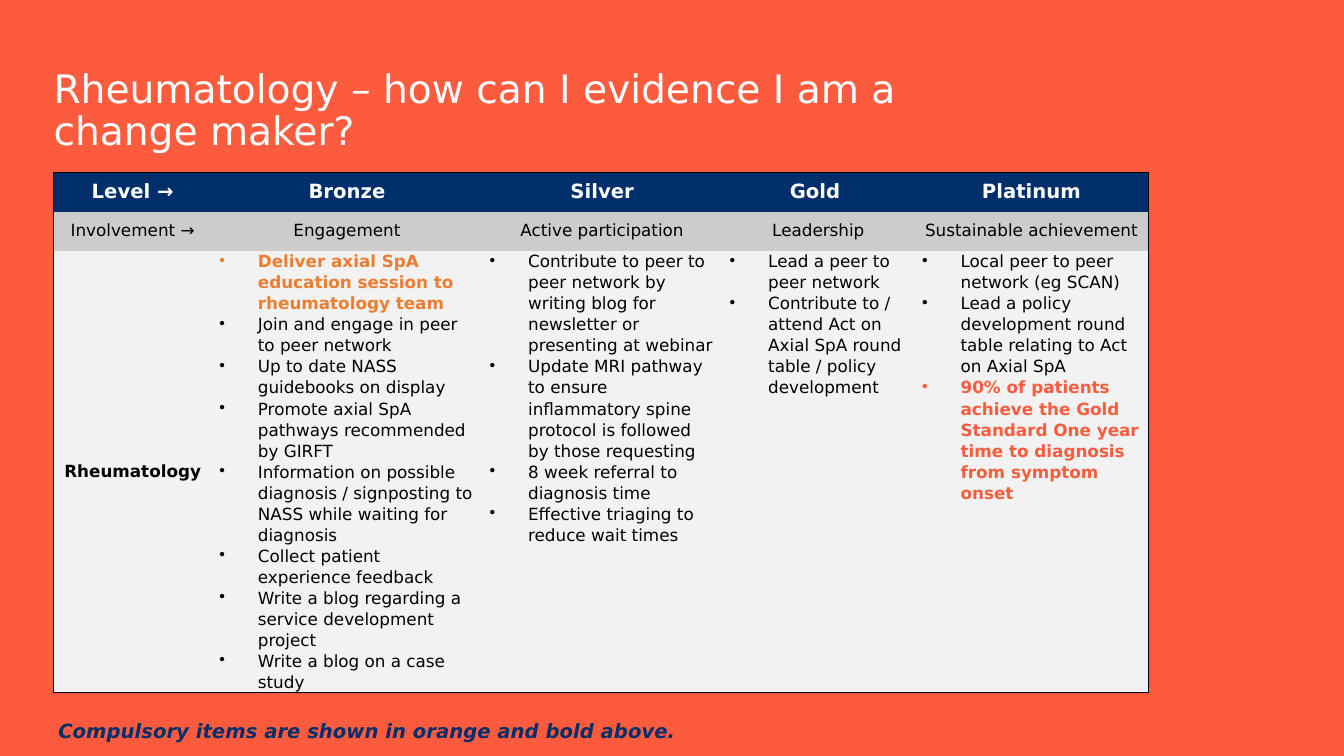
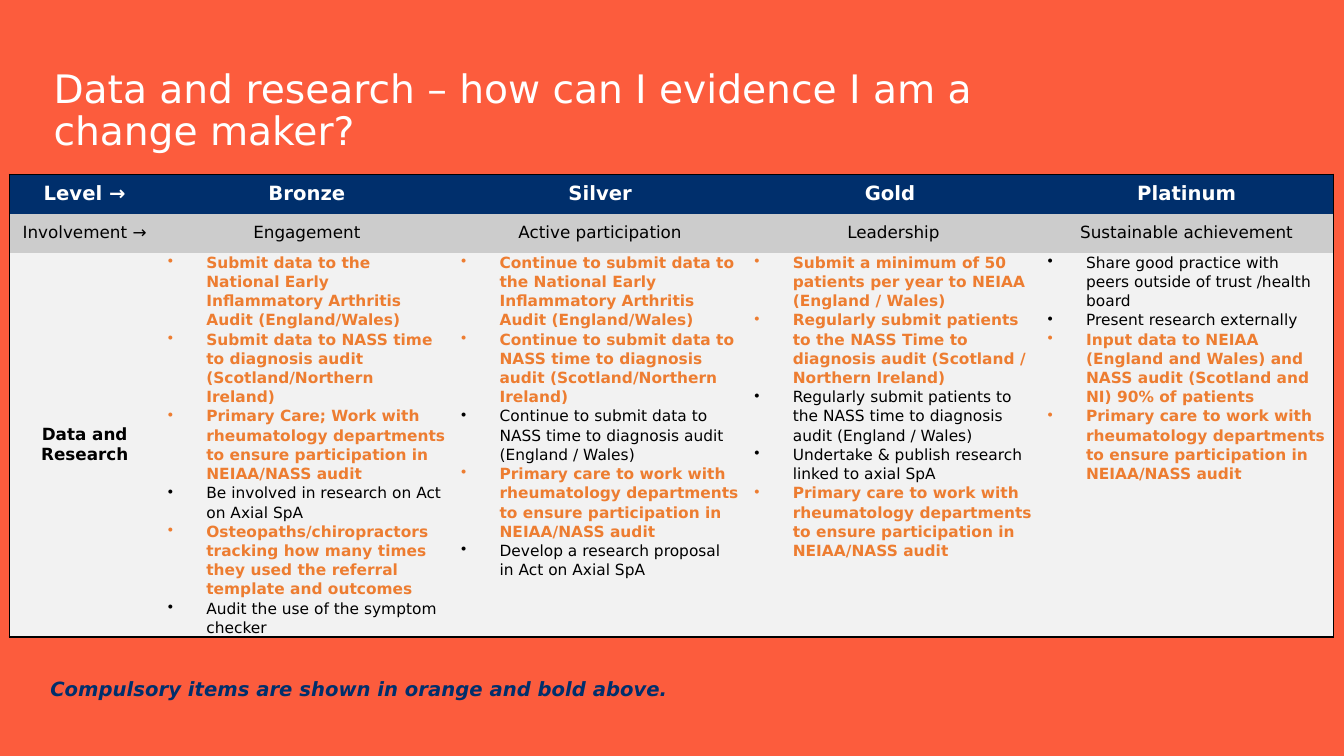
from dataclasses import dataclass

import pptx
import pptx.dml.color
import pptx.enum.text
import pptx.oxml.ns
import pptx.presentation
import pptx.slide
import pptx.table
import pptx.text.text
import pptx.util
from lxml import etree
from pptx.util import Cm, Pt

ALIGN = pptx.enum.text.PP_ALIGN
ANCHOR = pptx.enum.text.MSO_ANCHOR


@dataclass(frozen=True)
class Theme:
    font: str = "DejaVu Sans"
    coral: str = "FC5C3D"
    orange: str = "ED7D31"
    navy: str = "002F6C"
    grey: str = "CCCCCC"
    pale: str = "F2F2F2"
    white: str = "FFFFFF"
    black: str = "000000"
    title_size: float = 28
    heading_size: float = 14
    label_size: float = 12
    border: float = 1


THEME = Theme()


@dataclass(frozen=True)
class Item:
    """One activity; a compulsory one carries a highlight colour."""
    text: str
    highlight: str = ""


@dataclass(frozen=True)
class Page:
    title: str
    team: str
    left: float
    top: float
    columns: tuple[float, ...]
    body_height: float
    item_size: float
    note_left: float
    note_top: float
    activities: tuple[tuple[Item, ...], ...]


def must(text: str, colour: str = THEME.orange) -> Item:
    return Item(text, colour)


# Content
LEVELS = ("Level →", "Bronze", "Silver", "Gold ", "Platinum")
INVOLVEMENT = ("Involvement →", "Engagement", "Active participation", "Leadership",
               "Sustainable achievement")
NOTE = "Compulsory items are shown in orange and bold above."
HEADER_HEIGHT = 0.99
PRIMARY_CARE = must("Primary care to work with rheumatology departments to ensure "
                    "participation in NEIAA/NASS audit")

PAGES = (
    Page(
        title="Rheumatology – how can I evidence I am a change maker?",
        team="Rheumatology",
        left=1.35, top=4.34, columns=(3.99, 6.81, 6.05, 4.85, 5.89),
        body_height=11.1, item_size=12, note_left=0.71, note_top=17.98,
        activities=(
            (must("Deliver axial SpA education session to rheumatology team"),
             Item("Join and engage in peer to peer network"),
             Item("Up to date NASS guidebooks on display"),
             Item("Promote axial SpA pathways recommended by GIRFT"),
             Item("Information on possible diagnosis / signposting to NASS while waiting "
                  "for diagnosis"),
             Item("Collect patient experience feedback"),
             Item("Write a blog regarding a service development project"),
             Item("Write a blog on a case study")),
            (Item("Contribute to peer to peer network by writing blog for newsletter or "
                  "presenting at webinar"),
             Item("Update MRI pathway to ensure inflammatory spine protocol is followed "
                  "by those requesting"),
             Item("8 week referral to diagnosis time"),
             Item("Effective triaging to reduce wait times")),
            (Item("Lead a peer to peer network"),
             Item("Contribute to / attend Act on Axial SpA round table / policy "
                  "development")),
            (Item("Local peer to peer network (eg SCAN)"),
             Item("Lead a policy development round table relating to Act on Axial SpA"),
             must("90% of patients achieve the Gold Standard One year time to diagnosis "
                  "from symptom onset", THEME.coral)),
        ),
    ),
    Page(
        title="Data and research – how can I evidence I am a change maker?",
        team="Data and Research",
        left=0.23, top=4.39, columns=(3.81,) + (7.39,) * 4,
        body_height=9.67, item_size=11, note_left=0.51, note_top=16.94,
        activities=(
            (must("Submit data to the National Early Inflammatory Arthritis Audit "
                  "(England/Wales)"),
             must("Submit data to NASS time to diagnosis audit (Scotland/Northern Ireland)"),
             must("Primary Care; Work with rheumatology departments to ensure "
                  "participation in NEIAA/NASS audit"),
             Item("Be involved in research on Act on Axial SpA"),
             must("Osteopaths/chiropractors tracking how many times they used the "
                  "referral template and outcomes"),
             Item("Audit the use of the symptom checker")),
            (must("Continue to submit data to the National Early Inflammatory Arthritis "
                  "Audit (England/Wales)"),
             must("Continue to submit data to NASS time to diagnosis audit "
                  "(Scotland/Northern Ireland)"),
             Item("Continue to submit data to NASS time to diagnosis audit "
                  "(England / Wales)"),
             PRIMARY_CARE,
             Item("Develop a research proposal in Act on Axial SpA")),
            (must("Submit a minimum of 50 patients per year to NEIAA (England / Wales)"),
             must("Regularly submit patients to the NASS Time to diagnosis audit "
                  "(Scotland / Northern Ireland)"),
             Item("Regularly submit patients to the NASS time to diagnosis audit "
                  "(England / Wales)"),
             Item("Undertake & publish research linked to axial SpA"),
             PRIMARY_CARE),
            (Item("Share good practice with peers outside of trust /health board"),
             Item("Present research externally"),
             must("Input data to NEIAA (England and Wales) and NASS audit (Scotland and "
                  "NI) 90% of patients"),
             PRIMARY_CARE),
        ),
    ),
)


# Text helpers
def rgb(colour: str) -> pptx.dml.color.RGBColor:
    return pptx.dml.color.RGBColor.from_string(colour)


def style(paragraph: pptx.text.text._Paragraph, size: float, colour: str,
          bold: bool = False, italic: bool = False) -> None:
    for run in paragraph.runs:
        run.font.name = THEME.font
        run.font.size = Pt(size)
        run.font.color.rgb = rgb(colour)
        run.font.bold = bold
        run.font.italic = italic


def indent(paragraph: pptx.text.text._Paragraph, left: float, first: float = 0,
           bullet: str = "") -> None:
    properties = paragraph._p.get_or_add_pPr()
    properties.set("marL", str(Cm(left)))
    properties.set("indent", str(Cm(first)))
    if bullet:
        etree.SubElement(properties, pptx.oxml.ns.qn("a:buChar")).set("char", bullet)


# Table cells
def set_borders(cell: pptx.table._Cell, outer_sides: str) -> None:
    """Draw the named sides (of L, R, T, B) and hide the others."""
    qn = pptx.oxml.ns.qn
    properties = cell._tc.get_or_add_tcPr()
    for side in "LRTB":
        line = etree.SubElement(properties, qn(f"a:ln{side}"), w=str(Pt(THEME.border)))
        if side in outer_sides:
            fill = etree.SubElement(line, qn("a:solidFill"))
            etree.SubElement(fill, qn("a:srgbClr"), val=THEME.black)
        else:
            etree.SubElement(line, qn("a:noFill"))


def fill_label(cell: pptx.table._Cell, text: str, size: float, colour: str,
               bold: bool) -> None:
    cell.vertical_anchor = ANCHOR.MIDDLE
    cell.text_frame.text = text
    label = cell.text_frame.paragraphs[0]
    label.alignment = ALIGN.CENTER
    style(label, size, colour, bold)


def fill_activities(cell: pptx.table._Cell, items: tuple[Item, ...], size: float) -> None:
    cell.margin_left = cell.margin_right = Cm(0.19)
    cell.margin_top = cell.margin_bottom = 0
    cell.text_frame.text = "\n".join(item.text for item in items)
    for activity, item in zip(cell.text_frame.paragraphs, items):
        activity.line_spacing = 1.07
        indent(activity, 0.97, -0.97, "•")
        style(activity, size, item.highlight or THEME.black, bool(item.highlight))


# Slide parts
def add_levels_table(slide: pptx.slide.Slide, page: Page) -> None:
    heights = (HEADER_HEIGHT, HEADER_HEIGHT, page.body_height)
    fills = (THEME.navy, THEME.grey, THEME.pale)
    last_row, last_column = len(heights) - 1, len(page.columns) - 1
    levels = slide.shapes.add_table(
        len(heights), len(page.columns), Cm(page.left), Cm(page.top),
        Cm(sum(page.columns)), Cm(sum(heights))).table
    levels.first_row = levels.horz_banding = False
    for column, width in zip(levels.columns, page.columns):
        column.width = Cm(width)
    for r, (height, fill) in enumerate(zip(heights, fills)):
        levels.rows[r].height = Cm(height)
        for c in range(len(page.columns)):
            cell = levels.cell(r, c)
            set_borders(cell, "L" * (c == 0) + "R" * (c == last_column)
                        + "T" * (r == 0) + "B" * (r == last_row))
            cell.fill.solid()
            cell.fill.fore_color.rgb = rgb(fill)

    for c, (level, involvement) in enumerate(zip(LEVELS, INVOLVEMENT)):
        fill_label(levels.cell(0, c), level, THEME.heading_size, THEME.white, True)
        fill_label(levels.cell(1, c), involvement, THEME.label_size, THEME.black, False)
    fill_label(levels.cell(last_row, 0), page.team, THEME.label_size, THEME.black, True)
    for c, items in enumerate(page.activities, start=1):
        fill_activities(levels.cell(last_row, c), items, page.item_size)


def set_title(slide: pptx.slide.Slide, text: str) -> None:
    frame = slide.shapes.title.text_frame
    frame.text = text
    heading = frame.paragraphs[0]
    heading.alignment = ALIGN.LEFT
    heading.line_spacing = 0.9
    style(heading, THEME.title_size, THEME.white)


def add_note(slide: pptx.slide.Slide, left: float, top: float) -> None:
    frame = slide.shapes.add_textbox(Cm(left), Cm(top), Cm(31.8), Cm(1.05)).text_frame
    frame.word_wrap = True
    frame.margin_left = 0
    frame.text = NOTE
    note = frame.paragraphs[0]
    note.alignment = ALIGN.JUSTIFY
    indent(note, 0.76)
    style(note, THEME.heading_size, THEME.navy, bold=True, italic=True)


def prepare_layout(deck: pptx.presentation.Presentation) -> pptx.slide.SlideLayout:
    """Set the shared background and title frame."""
    background = deck.slide_master.background.fill
    background.solid()
    background.fore_color.rgb = rgb(THEME.coral)
    layout = deck.slide_layouts.get_by_name("Title Only")
    title = layout.placeholders[0]
    title.left, title.top, title.width, title.height = Cm(1.35), Cm(1.57), Cm(24.16), Cm(2.49)
    frame = title.text_frame
    frame.margin_left = frame.margin_right = 0
    frame.vertical_anchor = ANCHOR.MIDDLE
    frame.auto_size = pptx.enum.text.MSO_AUTO_SIZE.NONE
    return layout


def main() -> None:
    deck = pptx.Presentation()
    deck.slide_width, deck.slide_height = Cm(33.87), Cm(19.05)
    layout = prepare_layout(deck)
    for page in PAGES:
        slide = deck.slides.add_slide(layout)
        set_title(slide, page.title)
        add_levels_table(slide, page)
        add_note(slide, page.note_left, page.note_top)
    deck.save("out.pptx")


if __name__ == "__main__":
    main()
